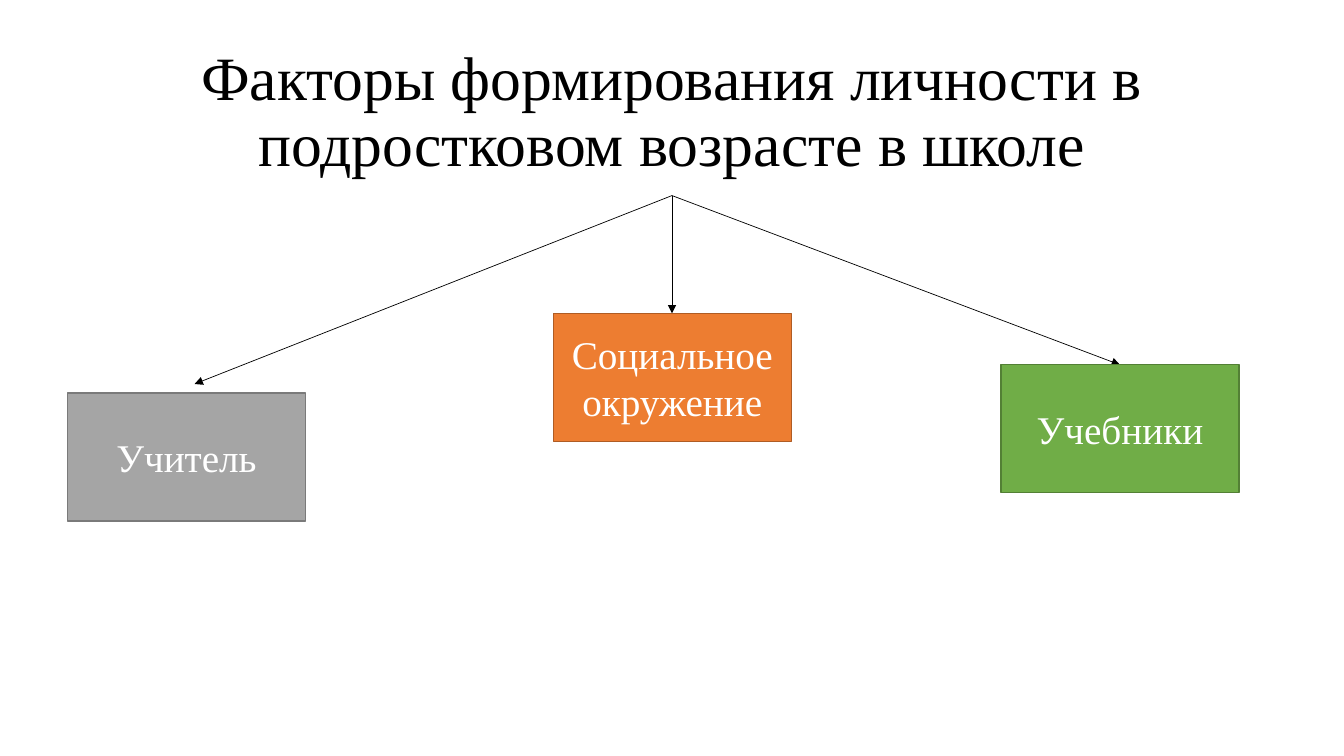
from pptx import Presentation
from pptx.dml.color import RGBColor
from pptx.enum.shapes import MSO_CONNECTOR, MSO_SHAPE
from pptx.enum.text import MSO_ANCHOR, PP_ALIGN
from pptx.oxml.ns import qn
from pptx.util import Pt
from lxml.etree import SubElement

TITLE = "Факторы формирования личности в подростковом возрасте в школе"
TITLE_BOX = (66, 28.8, 828, 104.4)
FACTORS = [
    {"lines": ["Учитель"], "color": "gray", "at": (48.2, 280.8), "tip": (139, 274.3)},
    {"lines": ["Учебники"], "color": "green", "at": (715, 260.6), "tip": (800, 260.6)},
    {"lines": ["Социальное", "окружение"], "color": "orange", "at": (395.2, 223.9), "tip": (480, 223.9)},
]
COLORS = {
    "black": "000000", "white": "FFFFFF",
    "gray": "A5A5A5", "gray_edge": "7A7A7A",
    "green": "70AD47", "green_edge": "538035",
    "orange": "ED7D31", "orange_edge": "AF5C24",
}
HUB = (480, 139.7)
BOX_SIZE = (170, 91.4)
TITLE_FONT = {"name": "Times New Roman", "size": Pt(44)}
BOX_FONT = {"name": "Times New Roman", "size": Pt(28)}


def rgb(name):
    return RGBColor.from_string(COLORS[name])


def pts(values):
    return [Pt(v) for v in values]


def write(tf, lines, font, color, spacing):
    tf.word_wrap = True
    tf.vertical_anchor = MSO_ANCHOR.MIDDLE
    for i, line in enumerate(lines):
        p = tf.paragraphs[0] if i == 0 else tf.add_paragraph()
        p.alignment = PP_ALIGN.CENTER
        p.line_spacing = spacing
        r = p.add_run()
        r.text = line
        for key, value in font.items():
            setattr(r.font, key, value)
        r.font.color.rgb = rgb(color)


def add_arrow(s, start, end):
    line = s.shapes.add_connector(MSO_CONNECTOR.STRAIGHT, *pts(start + end))
    line.line.color.rgb = rgb("black")
    line.line.width = Pt(0.5)
    SubElement(line.line._get_or_add_ln(), qn("a:tailEnd"), type="triangle")
    SubElement(line._element.spPr, qn("a:effectLst"))


def add_box(s, factor):
    sp = s.shapes.add_shape(MSO_SHAPE.RECTANGLE, *pts(factor["at"] + BOX_SIZE))
    sp.shadow.inherit = False
    sp.fill.solid()
    sp.fill.fore_color.rgb = rgb(factor["color"])
    sp.line.color.rgb = rgb(factor["color"] + "_edge")
    sp.line.width = Pt(1)
    write(sp.text_frame, factor["lines"], BOX_FONT, "white", 1.0)


def main():
    prs = Presentation()
    prs.slide_width, prs.slide_height = Pt(960), Pt(540)
    s = prs.slides.add_slide(prs.slide_layouts[5])
    title = s.shapes.title
    title.left, title.top, title.width, title.height = pts(TITLE_BOX)
    write(title.text_frame, [TITLE], TITLE_FONT, "black", 0.9)
    for factor in FACTORS:
        add_arrow(s, HUB, factor["tip"])
    for factor in FACTORS:
        add_box(s, factor)
    prs.save("out.pptx")


if __name__ == "__main__":
    main()
